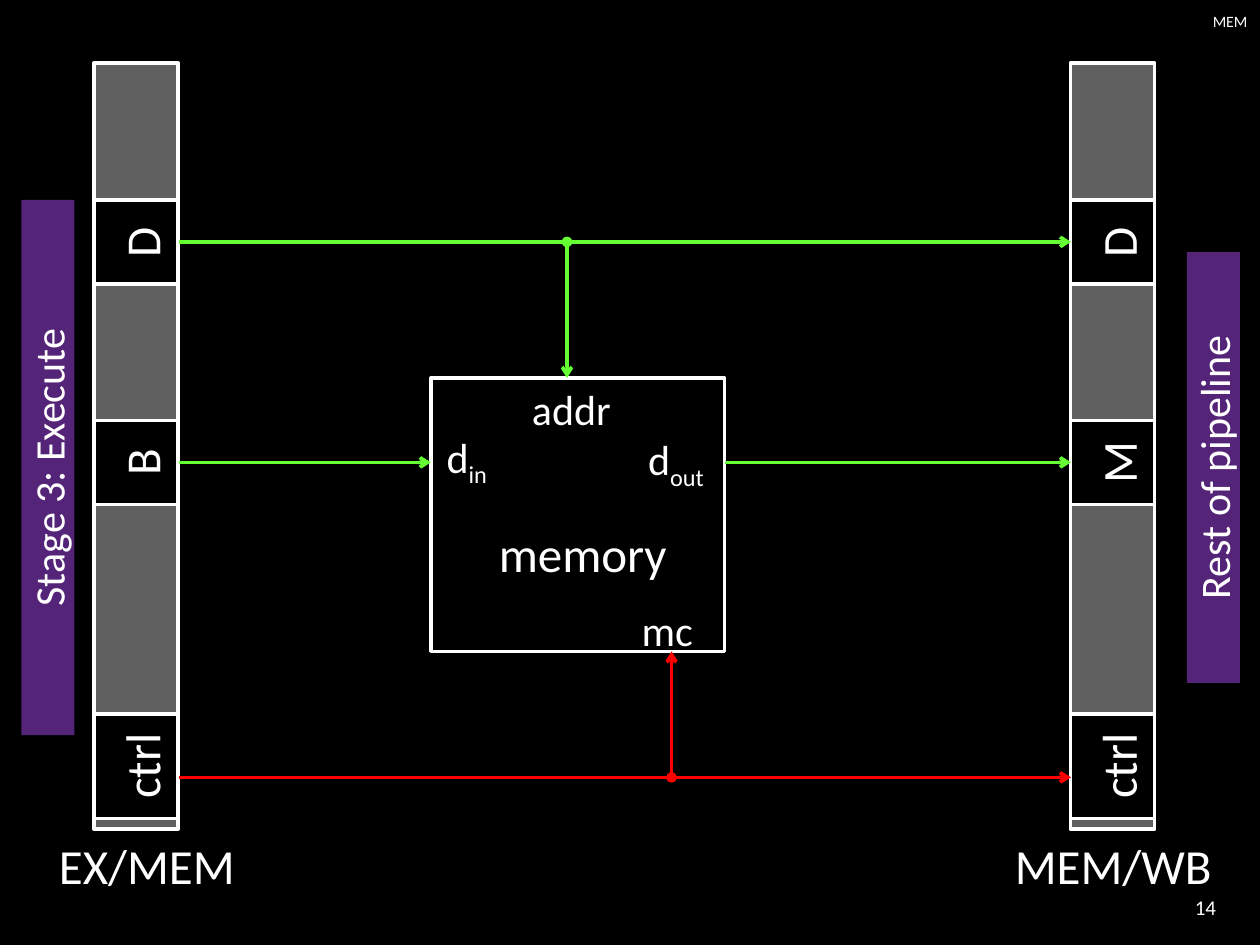
from lxml import etree
from pptx import Presentation
from pptx import util as u
from pptx.dml.color import RGBColor
from pptx.enum import shapes, text
from pptx.oxml.ns import qn

BLACK = RGBColor(0x00, 0x00, 0x00)
WHITE = RGBColor(0xFF, 0xFF, 0xFF)
GRAY = RGBColor(0x60, 0x60, 0x60)
PURPLE = RGBColor(0x54, 0x24, 0x78)
GREEN = RGBColor(0x66, 0xFF, 0x33)
RED = RGBColor(0xFF, 0x00, 0x00)

# Sides of a box turned by 270 degrees: its top faces left, its bottom right
LEFT, RIGHT = 0, 2


class Sheet:
    font = "Calibri"
    weight = u.Pt(2)

    def __init__(self, deck):
        self.slide = deck.slides.add_slide(deck.slide_layouts[5])
        fill = self.slide.background.fill
        fill.solid()
        fill.fore_color.rgb = BLACK

    def letter(self, shape, words, size, align=text.PP_ALIGN.CENTER,
               space=None, sub=None):
        frame = shape.text_frame
        frame.text = words
        frame.word_wrap = True
        frame.vertical_anchor = text.MSO_ANCHOR.MIDDLE
        para = frame.paragraphs[0]
        para.alignment = align
        para.line_spacing = space
        if sub:
            run = para.add_run()
            run.text = sub
            run.font._element.set("baseline", "-25000")
        for run in para.runs:
            run.font.name = self.font
            run.font.size = u.Pt(size)
            run.font.color.rgb = WHITE

    def title(self, words, x, y, w, h):
        shape = self.slide.shapes.title
        shape.left, shape.top = u.Inches(x), u.Inches(y)
        shape.width, shape.height = u.Inches(w), u.Inches(h)
        self.letter(shape, words, 9, text.PP_ALIGN.RIGHT)

    def label(self, words, x, y, w, h, size, **style):
        box = self.slide.shapes.add_textbox(
            u.Inches(x), u.Inches(y), u.Inches(w), u.Inches(h))
        self.letter(box, words, size, **style)

    def box(self, x, y, w, h, color, edge=True):
        shape = self.slide.shapes.add_shape(
            shapes.MSO_SHAPE.RECTANGLE,
            u.Inches(x), u.Inches(y), u.Inches(w), u.Inches(h))
        shape.shadow.inherit = False
        shape.fill.solid()
        shape.fill.fore_color.rgb = color
        if edge:
            shape.line.color.rgb = WHITE
            shape.line.width = self.weight
        else:
            shape.line.fill.background()
        return shape

    def upright(self, mid_x, mid_y, long, thick, color, words="", size=28,
                edge=True, space=None):
        """Box centred on a point and turned to read upwards."""
        shape = self.box(mid_x - long / 2, mid_y - thick / 2, long, thick,
                         color, edge)
        shape.rotation = 270
        if words:
            self.letter(shape, words, size, space=space)
        return shape

    def arrow(self, x1, y1, x2, y2, color, start=None, end=None, dot=False):
        ends = [u.Inches(v) for v in (x1, y1, x2, y2)]
        line = self.slide.shapes.add_connector(
            shapes.MSO_CONNECTOR.STRAIGHT, *ends)
        if start:
            line.begin_connect(start, RIGHT)
        if end:
            line.end_connect(end, LEFT)
        # Joining ignores the boxes' rotation, so set the ends again
        line.begin_x, line.begin_y, line.end_x, line.end_y = ends
        line.line.color.rgb = color
        line.line.width = self.weight
        props = line._element.spPr
        stroke = props.find(qn("a:ln"))
        if dot:
            etree.SubElement(stroke, qn("a:headEnd")).set("type", "oval")
        etree.SubElement(stroke, qn("a:tailEnd")).set("type", "arrow")
        etree.SubElement(props, qn("a:effectLst"))

    def latch(self, mid_x, names):
        """Pipeline register with its fields; returns them from the top."""
        self.upright(mid_x, 3.54, 6.08, 0.67, GRAY)
        fields = zip(names, (ROW_D, ROW_B, 6.08), (0.67, 0.67, 0.83))
        return [self.upright(mid_x, y, long, 0.67, BLACK, name, space=1.16)
                for name, y, long in fields]


# Rows of the signals and facing sides of the two registers
ROW_D, ROW_B, ROW_C = 1.92, 3.67, 6.17
FROM_X, TO_X = 1.42, 8.5

deck = Presentation()
deck.slide_width, deck.slide_height = u.Inches(10), u.Inches(7.5)
sheet = Sheet(deck)

# Title and page number
sheet.title("MEM", 6.17, 0, 3.83, 0.33)
sheet.label("14", 8.92, 7, 0.83, 0.4, 12, align=text.PP_ALIGN.RIGHT)

# Neighbouring stages
sheet.upright(0.38, 3.71, 4.25, 0.42, PURPLE, "Stage 3: Execute", 24, False)
sheet.upright(9.63, 3.71, 3.42, 0.42, PURPLE, "Rest of pipeline", 24, False)

# Pipeline registers
d_in, b_in, _ = sheet.latch(1.08, ("D", "B", "ctrl"))
d_out, m_out, _ = sheet.latch(8.83, ("D", "M", "ctrl"))
sheet.label("EX/MEM", 0.33, 6.58, 1.67, 0.57, 28)
sheet.label("MEM/WB", 7.92, 6.58, 1.83, 0.57, 28)

# Memory and its ports
sheet.box(3.42, 3, 2.33, 2.17, BLACK)
sheet.label("memory", 3.75, 4, 1.75, 0.7, 28, space=1.16)
for name, sub, x, y, w in (("d", "in", 3.42, 3.4, 0.57),
                           ("d", "out", 5, 3.42, 0.73),
                           ("addr", None, 4, 3, 1.07),
                           ("mc", None, 4.92, 4.75, 0.75)):
    sheet.label(name, x, y, w, 0.43, 24, space=1.16, sub=sub)

# Data signals
sheet.arrow(FROM_X, ROW_D, TO_X, ROW_D, GREEN, d_in, d_out)
sheet.arrow(FROM_X, ROW_B, 3.42, ROW_B, GREEN, start=b_in)
sheet.arrow(5.75, ROW_B, TO_X, ROW_B, GREEN, end=m_out)
sheet.arrow(4.5, ROW_D, 4.5, 3, GREEN, dot=True)

# Control signals
sheet.arrow(FROM_X, ROW_C, TO_X, ROW_C, RED)
sheet.arrow(5.33, ROW_C, 5.33, 5.17, RED, dot=True)

deck.save("out.pptx")
